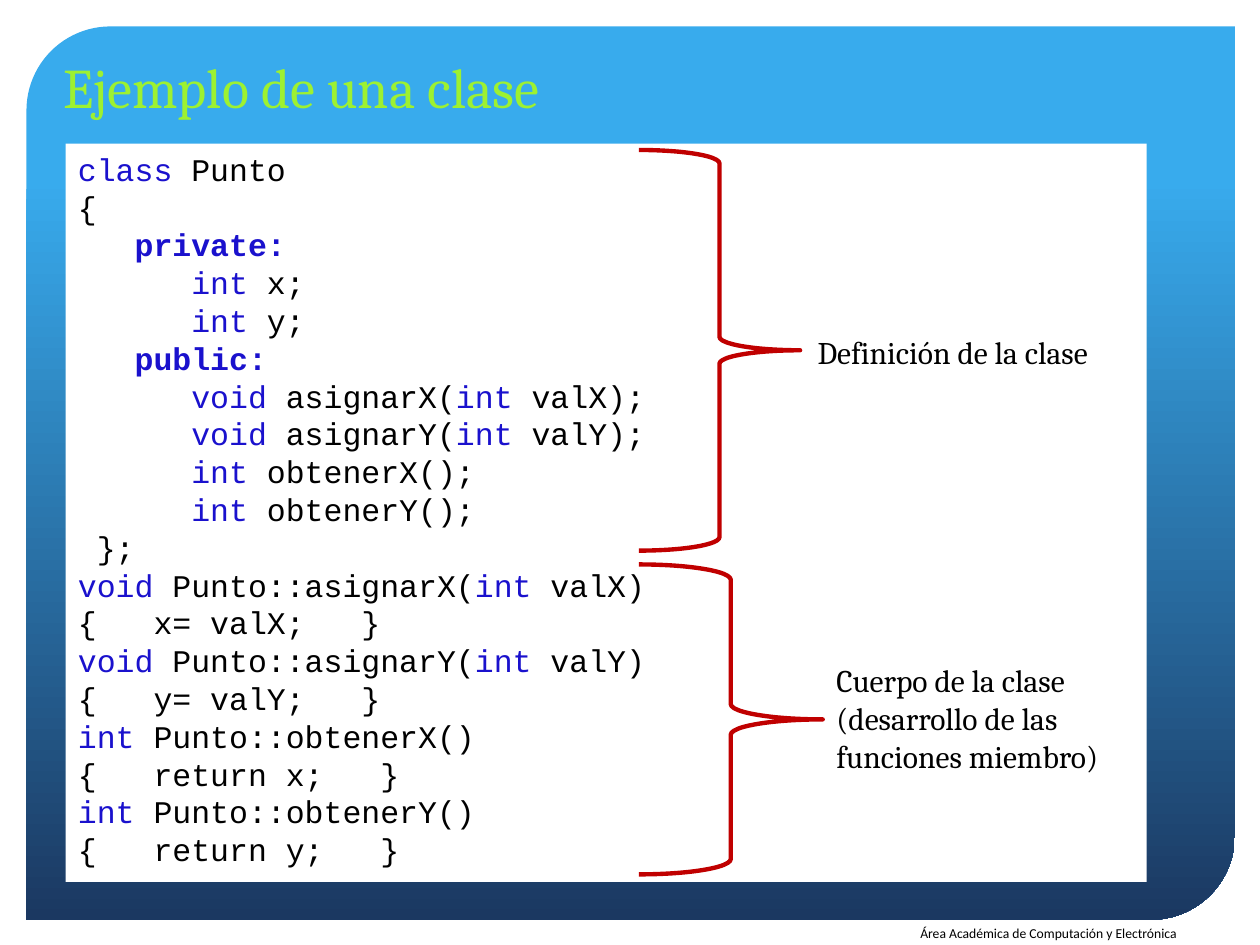
"""Build the slide that explains the parts of a C++ class."""
from dataclasses import dataclass

from pptx import Presentation
from pptx.dml.color import RGBColor
from pptx.enum.shapes import MSO_SHAPE
from pptx.enum.text import MSO_ANCHOR, MSO_AUTO_SIZE, PP_ALIGN
from pptx.util import Inches, Pt

RECT = MSO_SHAPE.RECTANGLE
ROUND_DIAGONAL = MSO_SHAPE.ROUND_2_DIAG_RECTANGLE
BRACE = MSO_SHAPE.RIGHT_BRACE
TOP, MIDDLE = MSO_ANCHOR.TOP, MSO_ANCHOR.MIDDLE
NO_FIT = MSO_AUTO_SIZE.NONE
LEFT, RIGHT = PP_ALIGN.LEFT, PP_ALIGN.RIGHT

BLACK = RGBColor(0x00, 0x00, 0x00)
WHITE = RGBColor(0xFF, 0xFF, 0xFF)
SKY = RGBColor(0x38, 0xAB, 0xED)
NAVY = RGBColor(0x1B, 0x38, 0x61)
LIME = RGBColor(0x9D, 0xF1, 0x31)
KEYWORD = RGBColor(0x1A, 0x11, 0xCD)
RED = RGBColor(0xC0, 0x00, 0x00)

KEYWORD_MARK = "|"
CODE = """\
|class| Punto
{
   |private:|
      |int| x;
      |int| y;
   |public:|
      |void| asignarX(|int| valX);
      |void| asignarY(|int| valY);
      |int| obtenerX();
      |int| obtenerY();
 };
|void| Punto::asignarX(|int| valX)
{   x= valX;   }
|void| Punto::asignarY(|int| valY)
{   y= valY;   }
|int| Punto::obtenerX()
{   return x;   }
|int| Punto::obtenerY()
{   return y;   }"""


@dataclass(frozen=True)
class Box:
    left: float
    top: float
    width: float
    height: float

    def lengths(self):
        return [Inches(v) for v in (self.left, self.top, self.width, self.height)]


@dataclass(frozen=True)
class Note:
    brace: Box
    label: Box
    text: str


NOTES = [
    Note(Box(5.07, 1.19, 1.28, 3.18), Box(6.39, 2.59, 2.72, 0.4),
         "Definición de la clase"),
    Note(Box(5.07, 4.48, 1.46, 2.46), Box(6.54, 5.2, 2.54, 1.01),
         "Cuerpo de la clase (desarrollo de las funciones miembro)"),
]


def format_font(font, name: str, size: float, color: RGBColor, bold: bool = False) -> None:
    font.name, font.size, font.bold = name, Pt(size), bold
    font.color.rgb = color


def add_shape(s, kind, box: Box):
    sp = s.shapes.add_shape(kind, *box.lengths())
    sp.shadow.inherit = False
    sp.line.fill.background()
    return sp


def add_label(s, box: Box, text: str, font: str, size: float, align=LEFT) -> None:
    tf = s.shapes.add_textbox(*box.lengths()).text_frame
    tf.word_wrap = True
    tf.text = text
    p = tf.paragraphs[0]
    p.alignment = align
    format_font(p.runs[0].font, font, size, BLACK)


def add_background(s) -> None:
    sp = add_shape(s, ROUND_DIAGONAL, Box(0.21, 0.21, 9.59, 7.09))
    sp.adjustments[0], sp.adjustments[1] = 0.094, 0
    sp.fill.gradient()
    sp.fill.gradient_angle = 270
    for stop, position, color in zip(sp.fill.gradient_stops, (0.17, 1), (SKY, NAVY)):
        stop.position = position
        stop.color.rgb = color
    s.shapes.title.element.addprevious(sp.element)


def format_title(s) -> None:
    title = s.shapes.title
    title.left, title.top, title.width, title.height = Box(0.4, 0.36, 5.99, 0.64).lengths()
    tf = title.text_frame
    tf.text = "Ejemplo de una clase"
    tf.auto_size, tf.vertical_anchor = NO_FIT, MIDDLE
    p = tf.paragraphs[0]
    p.alignment = LEFT
    format_font(p.runs[0].font, "Cambria", 32, LIME)


def add_code(s) -> None:
    sp = add_shape(s, RECT, Box(0.52, 1.14, 8.58, 5.86))
    sp.fill.solid()
    sp.fill.fore_color.rgb = WHITE
    tf = sp.text_frame
    tf.word_wrap, tf.vertical_anchor = True, TOP
    for i, line in enumerate(CODE.splitlines()):
        p = tf.add_paragraph() if i else tf.paragraphs[0]
        p.alignment = LEFT
        for j, part in enumerate(line.split(KEYWORD_MARK)):
            if part:
                r = p.add_run()
                r.text = part
                is_keyword = j % 2 == 1
                format_font(r.font, "Courier New", 18, KEYWORD if is_keyword else BLACK,
                            is_keyword and part.endswith(":"))


def add_note(s, note: Note) -> None:
    sp = add_shape(s, BRACE, note.brace)
    sp.fill.background()
    sp.line.color.rgb = RED
    sp.line.width = Pt(2.5)
    add_label(s, note.label, note.text, "Cambria", 18)


def main() -> None:
    prs = Presentation()
    prs.slide_width, prs.slide_height = Inches(10), Inches(7.5)
    s = prs.slides.add_slide(prs.slide_layouts.get_by_name("Title Only"))
    add_background(s)
    format_title(s)
    add_code(s)
    for note in NOTES:
        add_note(s, note)
    add_label(s, Box(5.13, 7.29, 4.31, 0.21),
              "Área Académica de Computación y Electrónica", "Calibri", 7.8, RIGHT)
    prs.save("out.pptx")


if __name__ == "__main__":
    main()
